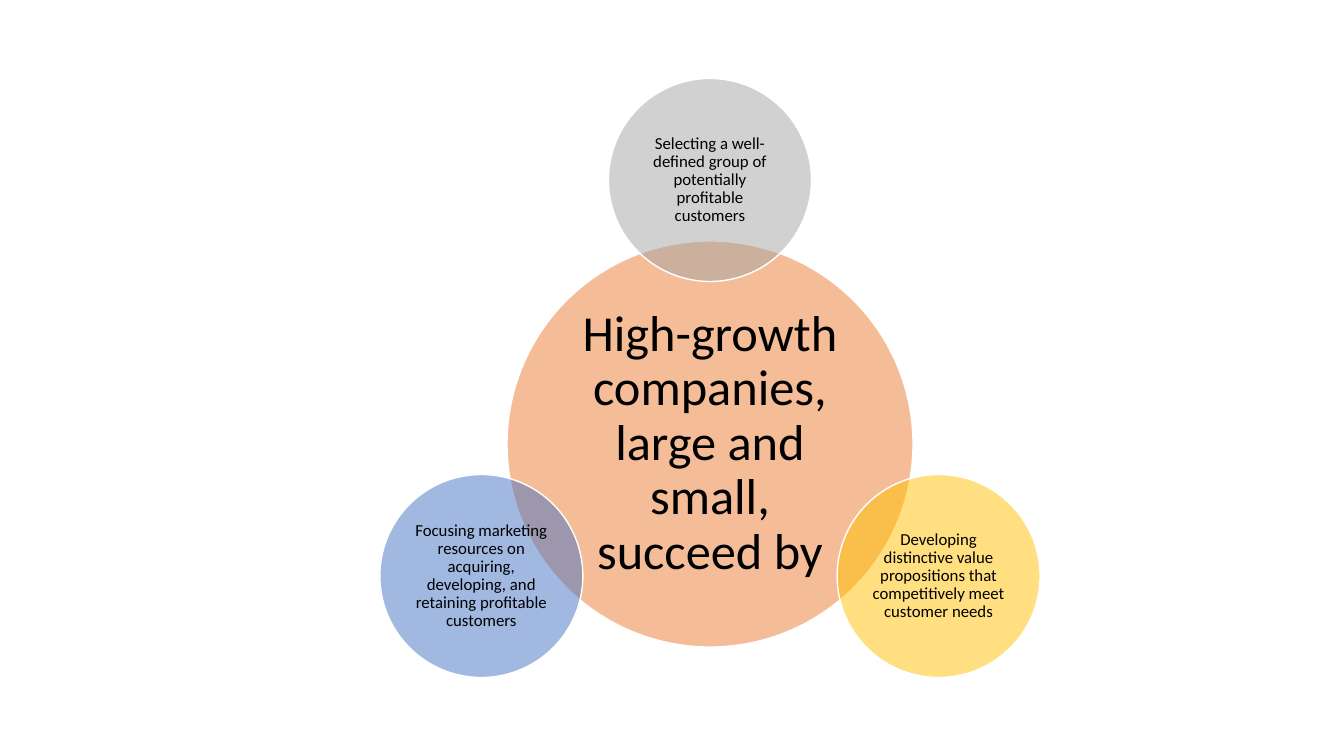
from math import cos, radians, sin

from lxml.etree import SubElement
from pptx import Presentation
from pptx.dml.color import RGBColor
from pptx.enum.shapes import MSO_SHAPE as Shape
from pptx.enum.text import MSO_ANCHOR as Anchor, PP_ALIGN as Align
from pptx.oxml.ns import qn
from pptx.util import Emu, Pt

COLORS = {
    "orange": "ED7D31",
    "gray": "A5A5A5",
    "gold": "FFC000",
    "blue": "4472C4",
    "white": "FFFFFF",
    "black": "000000",
}
PX = 914400 / 100.8
CENTER_X, CENTER_Y = 710, 444
HUB_SIZE, SATELLITE_SIZE = 406, 203
ORBIT = 264

HUB_TEXT = "High-growth companies, large and small, succeed by"
SATELLITES = [
    ("gray", "Selecting a well-defined group of potentially profitable customers"),
    ("gold", "Developing distinctive value propositions that competitively meet customer needs"),
    ("blue", "Focusing marketing resources on acquiring, developing, and retaining profitable customers"),
]


def px(length):
    return Emu(round(length * PX))


def rgb(name):
    return RGBColor.from_string(COLORS[name])


class RadialVenn:
    font = "Calibri"
    opacity = 50

    def __init__(self, page):
        self.page = page

    def circle(self, center_x, center_y, size, color, text, points, inset):
        left, top = center_x - size / 2, center_y - size / 2
        disc = self.page.shapes.add_shape(Shape.OVAL, px(left), px(top), px(size), px(size))
        disc.shadow.inherit = False
        disc.fill.solid()
        disc.fill.fore_color.rgb = rgb(color)
        shade = disc.fill._xPr.find(qn("a:solidFill"))[0]
        SubElement(shade, qn("a:alpha"), val=str(self.opacity * 1000))
        disc.line.color.rgb = rgb("white")
        disc.line.width = Pt(1)
        self.label(disc.text_frame, text, points, inset)

    def label(self, frame, text, points, inset):
        frame.text = text
        frame.word_wrap = True
        frame.vertical_anchor = Anchor.MIDDLE
        frame.margin_left = frame.margin_right = px(inset)
        frame.margin_top = frame.margin_bottom = px(inset)
        para = frame.paragraphs[0]
        para.alignment = Align.CENTER
        para.line_spacing = 0.9
        span = para.runs[0]
        span.font.name = self.font
        span.font.size = Pt(points)
        span.font.color.rgb = rgb("black")


def main():
    deck = Presentation()
    deck.slide_width, deck.slide_height = px(1344), px(756)
    venn = RadialVenn(deck.slides.add_slide(deck.slide_layouts[6]))

    venn.circle(CENTER_X, CENTER_Y, HUB_SIZE, "orange", HUB_TEXT, 36, 5)
    for index, (color, text) in enumerate(SATELLITES):
        angle = radians(360 / len(SATELLITES) * index - 90)
        center_x = CENTER_X + ORBIT * cos(angle)
        center_y = CENTER_Y + ORBIT * sin(angle)
        venn.circle(center_x, center_y, SATELLITE_SIZE, color, text, 12, 2)

    deck.save("out.pptx")


if __name__ == "__main__":
    main()
